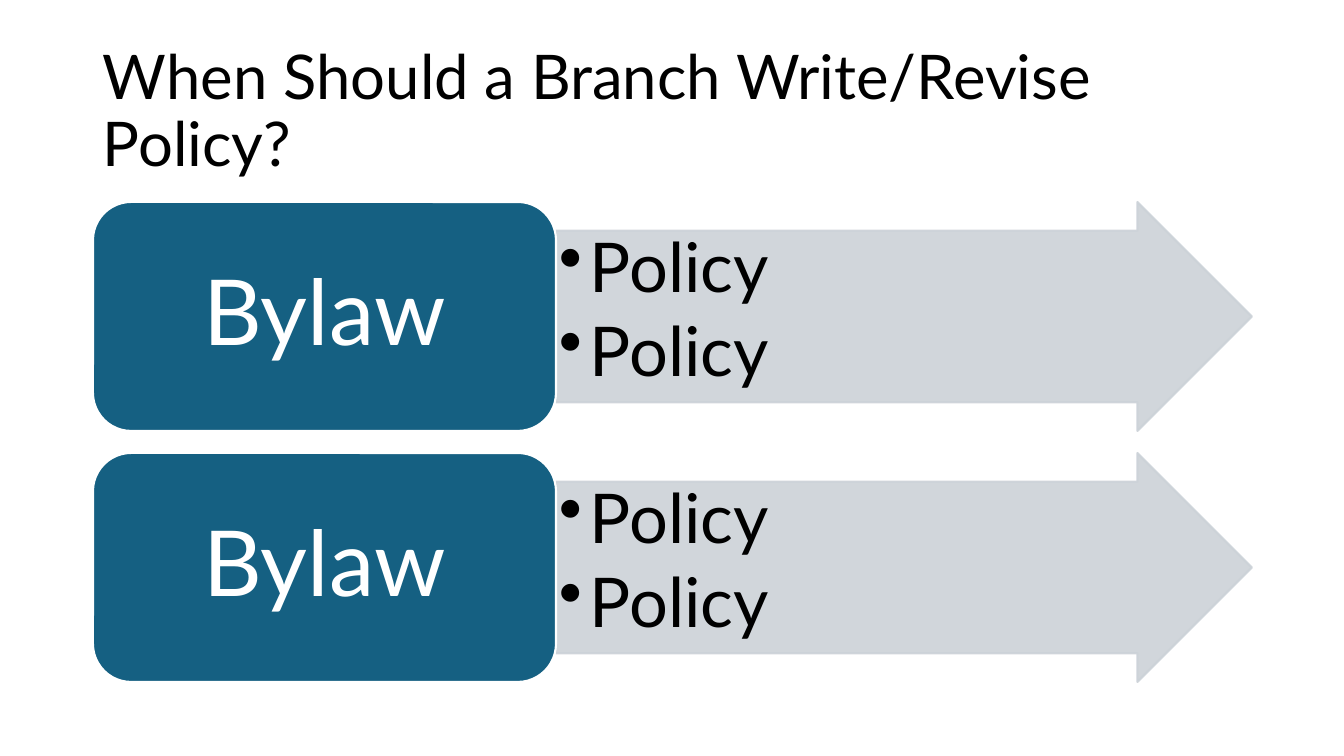
from dataclasses import dataclass

from lxml import etree
from pptx import Presentation
from pptx import util as u
from pptx.dml.color import RGBColor
from pptx.enum import shapes, text
from pptx.oxml import ns

PX = 914400 / 100.8


@dataclass(frozen=True)
class Theme:
    """Colours, font and type sizes of the slide."""
    font: str = "Lato"
    ink: str = "000000"
    paper: str = "FFFFFF"
    box: str = "156082"
    arrow: str = "CCD2D8"
    title_size: int = 44
    bylaw_size: int = 65
    policy_size: int = 49


THEME = Theme()
ROWS = [("Bylaw", ["Policy", "Policy"])] * 2
TOP, PITCH, HEIGHT = 202, 251, 229
LEFT, BOX_WIDTH, ARROW_WIDTH = 93, 463, 696


def px(n):
    """Turn pixels into EMU."""
    return u.Emu(round(n * PX))


def apply(target, values):
    """Set each named attribute of the target."""
    for name, value in values.items():
        setattr(target, name, value)


def place(sp, x, y, w, h):
    """Position a shape in pixels."""
    apply(sp, dict(zip(("left", "top", "width", "height"), map(px, (x, y, w, h)))))


def fill_text(sp, lines, size, colour, align, anchor, inset=(10, 5), after=0):
    """Write one styled paragraph per line."""
    tf = sp.text_frame
    side, edge = map(px, inset)
    apply(tf, {"word_wrap": True, "vertical_anchor": anchor,
               "margin_left": side, "margin_right": side,
               "margin_top": edge, "margin_bottom": edge})
    for i, line in enumerate(lines):
        p = tf.add_paragraph() if i else tf.paragraphs[0]
        apply(p, {"alignment": align, "line_spacing": 0.9, "space_after": u.Pt(after)})
        r = p.add_run()
        r.text = line
        apply(r.font, {"name": THEME.font, "size": u.Pt(size)})
        r.font.color.rgb = RGBColor.from_string(colour)


def add_block(slide, kind, bounds, fill, line):
    """Add a filled, outlined shape."""
    sp = slide.shapes.add_shape(kind, *map(px, bounds))
    sp.shadow.inherit = False
    sp.fill.solid()
    sp.fill.fore_color.rgb = RGBColor.from_string(fill)
    sp.line.color.rgb = RGBColor.from_string(line)
    sp.line.width = u.Pt(1.5)
    return sp


def set_opacity(sp, percent):
    """Make the fill and outline partly transparent."""
    for colour in sp._element.spPr.iter(ns.qn("a:srgbClr")):
        etree.SubElement(colour, ns.qn("a:alpha"), val=str(percent * 1000))


def add_bullets(sp, indent):
    """Give every paragraph a hanging round bullet."""
    for p in sp.text_frame.paragraphs:
        p.level = 1
        pPr = p._p.get_or_add_pPr()
        pPr.set("marL", str(px(indent)))
        pPr.set("indent", str(-px(indent)))
        etree.SubElement(pPr, ns.qn("a:buChar"), char="•")


def add_arrow(slide, y, policies):
    """Add an arrow listing policies."""
    sp = add_block(slide, shapes.MSO_SHAPE.RIGHT_ARROW,
                   (LEFT + BOX_WIDTH, y, ARROW_WIDTH, HEIGHT), THEME.arrow, THEME.arrow)
    sp.adjustments[0], sp.adjustments[1] = 0.75, 0.5
    set_opacity(sp, 90)
    fill_text(sp, policies, THEME.policy_size, THEME.ink, text.PP_ALIGN.LEFT,
              text.MSO_ANCHOR.TOP, inset=(3, 3), after=7)
    add_bullets(sp, 31)


def add_box(slide, y, label):
    """Add a rounded box with a centred label."""
    sp = add_block(slide, shapes.MSO_SHAPE.ROUNDED_RECTANGLE,
                   (LEFT, y, BOX_WIDTH, HEIGHT), THEME.box, THEME.paper)
    fill_text(sp, [label], THEME.bylaw_size, THEME.paper, text.PP_ALIGN.CENTER,
              text.MSO_ANCHOR.MIDDLE, inset=(27, 14))


def main():
    """Build and save the slide."""
    prs = Presentation()
    apply(prs, {"slide_width": px(1344), "slide_height": px(756)})
    slide = prs.slides.add_slide(prs.slide_layouts[5])
    title = slide.shapes.title
    place(title, LEFT, 40, BOX_WIDTH + ARROW_WIDTH, 146)
    fill_text(title, ["When Should a Branch Write/Revise Policy?"], THEME.title_size,
              THEME.ink, text.PP_ALIGN.LEFT, text.MSO_ANCHOR.MIDDLE)
    for i, (bylaw, policies) in enumerate(ROWS):
        y = TOP + i * PITCH
        add_arrow(slide, y, policies)
        add_box(slide, y, bylaw)
    prs.save("out.pptx")


if __name__ == "__main__":
    main()
